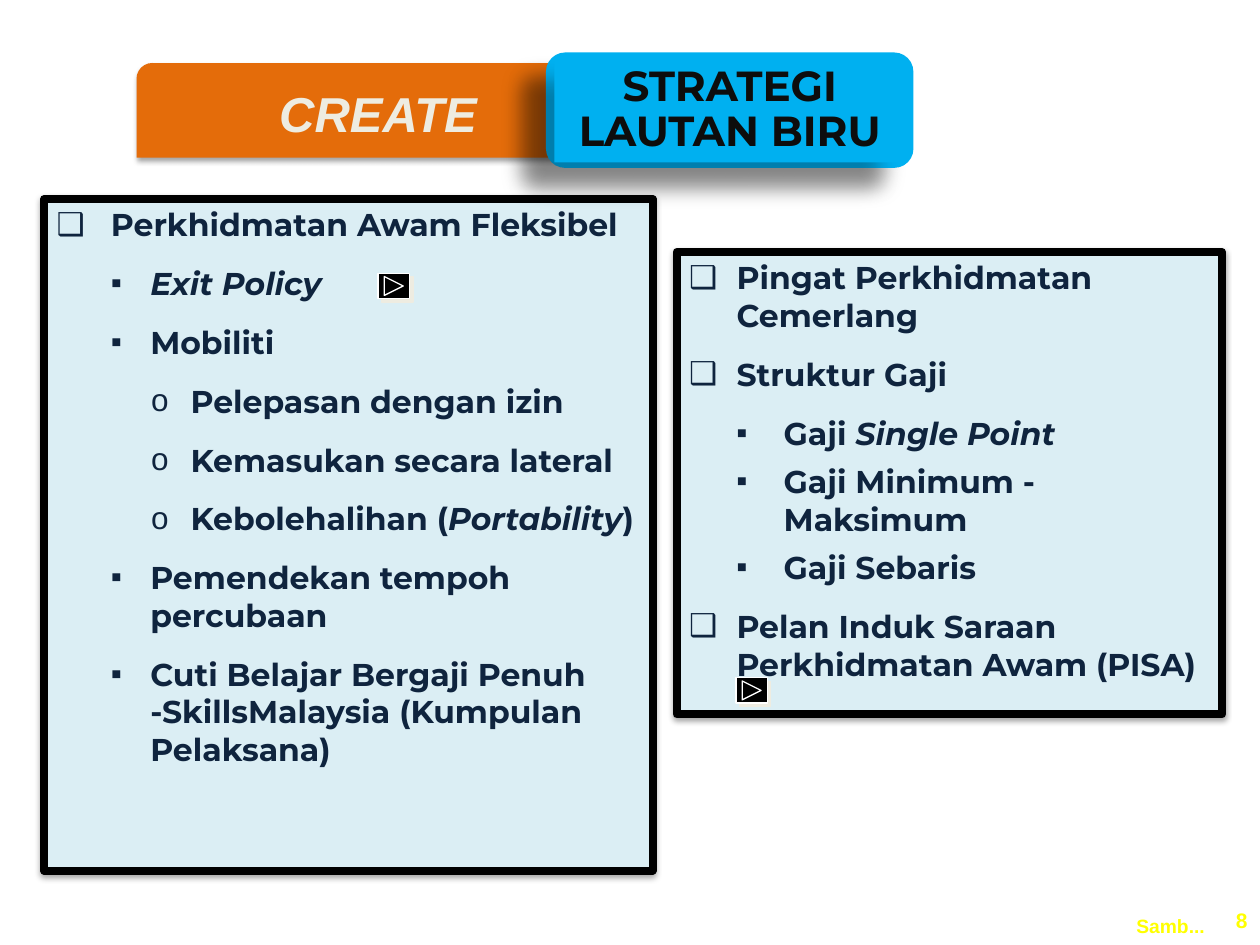
from lxml.etree import SubElement
from pptx import Presentation
from pptx.dml.color import RGBColor
from pptx.enum.shapes import MSO_SHAPE as Preset
from pptx.enum.text import MSO_ANCHOR as Anchor, MSO_AUTO_SIZE as AutoSize, PP_ALIGN as Align
from pptx.oxml.ns import qn
from pptx.util import Pt

BLACK = RGBColor(0x00, 0x00, 0x00)
WHITE = RGBColor(0xFF, 0xFF, 0xFF)
YELLOW = RGBColor(0xFF, 0xFF, 0x00)
NAVY = RGBColor(0x0F, 0x24, 0x3E)
PALE_BLUE = RGBColor(0xDB, 0xEE, 0xF4)
ORANGE = RGBColor(0xE4, 0x6C, 0x0A)
SKY = RGBColor(0x00, 0xB0, 0xF0)
CREAM = RGBColor(0xEE, 0xEC, 0xE1)
INK = RGBColor(0x0D, 0x0D, 0x0D)

SOFT_SHADOW = (BLACK, 35, 3.1, 1.8, 90)
DEEP_SHADOW = (BLACK, 28, 11.8, 19.7, 141)
BUTTON_SHADOW = (CREAM, 100, 0, 2.8, 45)

TITLE_LINES = ["STRATEGI", "LAUTAN BIRU"]
BOX, SQUARE, CIRCLE = "❑", "▪", "o"

# Each item: bullet, space after, runs (text, italic)
PANELS = [
    {
        "area": (25.2, 113.75, 347.75, 383.75),
        "indents": {BOX: (31, 31), SQUARE: (53.5, 22.5), CIRCLE: (76.5, 22.5)},
        "items": [
            (BOX, 12, [("Perkhidmatan Awam Fleksibel", False)]),
            (SQUARE, 12, [("Exit Policy", True)]),
            (SQUARE, 12, [("Mobiliti", False)]),
            (CIRCLE, 12, [("Pelepasan dengan izin", False)]),
            (CIRCLE, 12, [("Kemasukan secara lateral", False)]),
            (CIRCLE, 12, [("Kebolehalihan (", False), ("Portability", True), (")", False)]),
            (SQUARE, 12, [("Pemendekan tempoh percubaan", False)]),
            (SQUARE, 12, [("Cuti Belajar Bergaji Penuh -SkillsMalaysia (Kumpulan Pelaksana)", False)]),
        ],
    },
    {
        "area": (386.65, 144, 311.75, 264.25),
        "indents": {BOX: (27, 27), SQUARE: (54, 27)},
        "items": [
            (BOX, 12, [("Pingat Perkhidmatan Cemerlang", False)]),
            (BOX, 12, [("Struktur Gaji", False)]),
            (SQUARE, 6, [("Gaji ", False), ("Single Point", True)]),
            (SQUARE, 6, [("Gaji Minimum - Maksimum", False)]),
            (SQUARE, 12, [("Gaji Sebaris", False)]),
            (BOX, 12, [("Pelan Induk Saraan Perkhidmatan Awam (PISA)", False)]),
        ],
    },
]
BUTTONS = [(216, 156.25), (420.5, 387.35)]
CORNER_LABELS = [
    ("8", (552.25, 511.2, 167.75, 28.8), 12, Align.RIGHT, Anchor.MIDDLE),
    ("Samb...", (642.25, 519.1, 59.75, 20.9), 11, Align.JUSTIFY, Anchor.TOP),
]


def place(shape, area):
    shape.left, shape.top, shape.width, shape.height = map(Pt, area)


def paint(shape, fill, shadow, line=None, weight=0):
    shape.fill.solid()
    shape.fill.fore_color.rgb = fill
    if line is None:
        shape.line.fill.background()
    else:
        shape.line.color.rgb = line
        shape.line.width = Pt(weight)
    shape.shadow.inherit = False
    color, opacity, blur, distance, angle = shadow
    effects = shape._element.spPr.find(qn("a:effectLst"))
    outer = SubElement(effects, qn("a:outerShdw"), blurRad=str(Pt(blur)), dist=str(Pt(distance)),
                       dir=str(angle * 60000), algn="ctr", rotWithShape="0")
    tone = SubElement(outer, qn("a:srgbClr"), val=str(color))
    SubElement(tone, qn("a:alpha"), val=str(opacity * 1000))


def setup_frame(frame, anchor, inset=None):
    frame.word_wrap = True
    frame.auto_size = AutoSize.NONE
    frame.vertical_anchor = anchor
    if inset is not None:
        frame.margin_left = frame.margin_top = frame.margin_right = frame.margin_bottom = Pt(inset)


def style(paragraph, name, size, color, align=Align.LEFT):
    paragraph.alignment = align
    paragraph.space_before = Pt(0)
    font = paragraph.font
    font.name, font.size, font.bold = name, Pt(size), True
    font.color.rgb = color


def add_bullet(paragraph, character, margin, hanging):
    properties = paragraph._p.get_or_add_pPr()
    properties.set("marL", str(Pt(margin)))
    properties.set("indent", str(-Pt(hanging)))
    SubElement(properties, qn("a:buFont"), typeface="Arial")
    SubElement(properties, qn("a:buChar"), char=character)


def fill_panel(shape, panel):
    place(shape, panel["area"])
    paint(shape, PALE_BLUE, SOFT_SHADOW, BLACK, 4.5)
    frame = shape.text_frame
    setup_frame(frame, Anchor.TOP)
    for index, (bullet, space_after, runs) in enumerate(panel["items"]):
        paragraph = frame.add_paragraph() if index else frame.paragraphs[0]
        add_bullet(paragraph, bullet, *panel["indents"][bullet])
        style(paragraph, "Montserrat", 18, NAVY)
        paragraph.space_after = Pt(space_after)
        for text, italic in runs:
            run = paragraph.add_run()
            run.text = text
            if italic:
                run.font.italic = True


def add_block(shapes, preset, area, fill, shadow, **outline):
    shape = shapes.add_shape(preset, *map(Pt, area))
    paint(shape, fill, shadow, **outline)
    return shape


def main():
    presentation = Presentation()
    presentation.slide_width, presentation.slide_height = Pt(720), Pt(540)
    slide = presentation.slides.add_slide(presentation.slide_layouts[3])
    shapes = slide.shapes
    title, *bodies = slide.placeholders

    for text, area, size, align, anchor in CORNER_LABELS:
        label = shapes.add_textbox(*map(Pt, area))
        setup_frame(label.text_frame, anchor)
        paragraph = label.text_frame.paragraphs[0]
        paragraph.text = text
        style(paragraph, "Arial", size, YELLOW, align)

    for body, panel in zip(bodies, PANELS):
        fill_panel(body, panel)

    banner = add_block(shapes, Preset.ROUND_2_SAME_RECTANGLE, (78, 36, 276, 54), ORANGE, SOFT_SHADOW)
    setup_frame(banner.text_frame, Anchor.MIDDLE, 0)
    paragraph = banner.text_frame.paragraphs[0]
    paragraph.text = "CREATE"
    style(paragraph, "Arial", 28, CREAM, Align.CENTER)
    paragraph.font.italic = True

    add_block(shapes, Preset.ROUNDED_RECTANGLE, (312, 30, 210, 66), SKY, DEEP_SHADOW)
    place(title, (316.8, 33.2, 200.4, 59.6))
    paint(title, SKY, DEEP_SHADOW)
    setup_frame(title.text_frame, Anchor.MIDDLE, 8.64)
    title.text_frame.text = "\n".join(TITLE_LINES)
    for paragraph in title.text_frame.paragraphs:
        style(paragraph, "Montserrat", 24, INK, Align.CENTER)
        paragraph.line_spacing = 0.9
    shapes._spTree.append(title._element)

    for left, top in BUTTONS:
        add_block(shapes, Preset.ACTION_BUTTON_FORWARD_OR_NEXT, (left, top, 18, 14.4),
                  BLACK, BUTTON_SHADOW, line=WHITE, weight=0.75)

    presentation.save("out.pptx")


if __name__ == "__main__":
    main()
